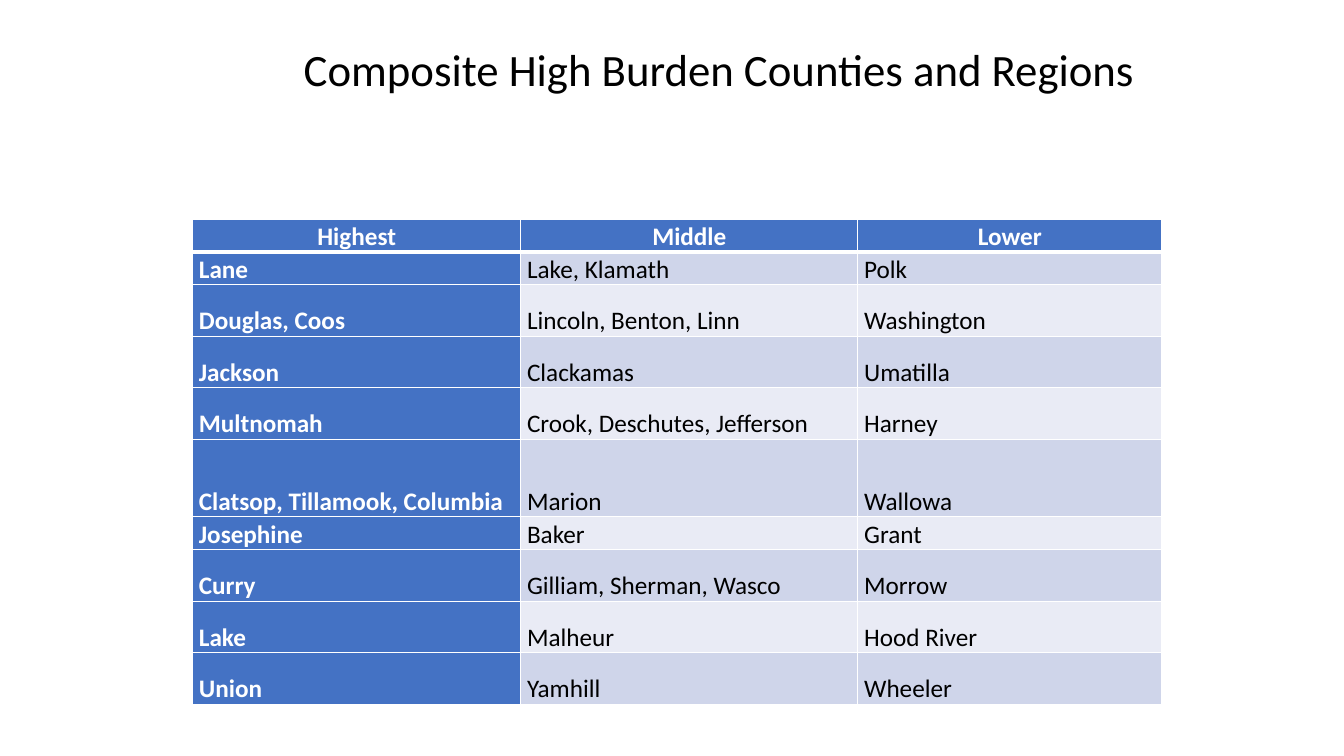
from dataclasses import dataclass

from lxml import etree
from pptx import Presentation
from pptx.dml.color import RGBColor
from pptx.enum.text import MSO_ANCHOR, MSO_AUTO_SIZE, PP_ALIGN
from pptx.oxml.ns import qn
from pptx.util import Pt

LEFT, CENTER = PP_ALIGN.LEFT, PP_ALIGN.CENTER
TOP, MIDDLE, BOTTOM = MSO_ANCHOR.TOP, MSO_ANCHOR.MIDDLE, MSO_ANCHOR.BOTTOM
NO_AUTOFIT = MSO_AUTO_SIZE.NONE
TITLE_ONLY = 5


@dataclass(frozen=True)
class Theme:
    font: str = "Calibri"
    title_size: int = 32
    table_size: int = 18
    dark: str = "000000"
    light: str = "FFFFFF"
    accent: str = "4472C4"
    bands: tuple = ("CFD5EA", "E9EBF5")
    thin: int = 1
    thick: int = 3


THEME = Theme()
TITLE = "Composite High Burden Counties and Regions"
COLUMN_WIDTHS = (234.4, 240.8, 217)
SHORT, MEDIUM, TALL = 18, 36.8, 55.4
COUNTIES = (
    (SHORT, "Highest", "Middle", "Lower"),
    (SHORT, "Lane", "Lake, Klamath", "Polk"),
    (MEDIUM, "Douglas, Coos", "Lincoln, Benton, Linn", "Washington"),
    (MEDIUM, "Jackson", "Clackamas", "Umatilla"),
    (MEDIUM, "Multnomah", "Crook, Deschutes, Jefferson", "Harney"),
    (TALL, "Clatsop, Tillamook, Columbia", "Marion", "Wallowa"),
    (SHORT, "Josephine", "Baker", "Grant"),
    (MEDIUM, "Curry", "Gilliam, Sherman, Wasco", "Morrow"),
    (MEDIUM, "Lake", "Malheur", "Hood River"),
    (MEDIUM, "Union", "Yamhill", "Wheeler"),
)


def write_text(tf, text, size, color, bold=False, align=LEFT, spacing=1.0):
    p = tf.paragraphs[0]
    p.alignment = align
    p.line_spacing = spacing
    r = p.add_run()
    r.text = text
    r.font.name = THEME.font
    r.font.size = Pt(size)
    r.font.bold = bold
    r.font.color.rgb = RGBColor.from_string(color)


def add_title(slide):
    sp = slide.shapes.title
    sp.left, sp.top, sp.width, sp.height = Pt(160.6), Pt(25.9), Pt(713.5), Pt(46)
    tf = sp.text_frame
    tf.auto_size = NO_AUTOFIT
    tf.word_wrap = True
    tf.vertical_anchor = TOP
    tf.margin_left, tf.margin_right = Pt(7.2), Pt(14.4)
    tf.margin_top = tf.margin_bottom = Pt(3.6)
    write_text(tf, TITLE, THEME.title_size, THEME.dark, align=CENTER)


def set_borders(cell, **widths):
    tc_pr = cell._tc.get_or_add_tcPr()
    for side in "LRTB":
        width = Pt(widths.get(side, THEME.thin))
        ln = etree.SubElement(tc_pr, qn(f"a:ln{side}"), w=str(width))
        fill = etree.SubElement(ln, qn("a:solidFill"))
        etree.SubElement(fill, qn("a:srgbClr"), val=THEME.light)


def format_cell(cell, text, row, col):
    header = row == 0
    strong = header or col == 0
    cell.margin_left = cell.margin_right = Pt(4.5)
    cell.margin_top = cell.margin_bottom = Pt(0)
    cell.vertical_anchor = MIDDLE if header else BOTTOM
    set_borders(
        cell,
        T=THEME.thick if row == 1 else THEME.thin,
        B=THEME.thick if header else THEME.thin,
    )
    cell.fill.solid()
    fill = THEME.accent if strong else THEME.bands[(row - 1) % 2]
    cell.fill.fore_color.rgb = RGBColor.from_string(fill)
    write_text(
        cell.text_frame,
        text,
        THEME.table_size,
        THEME.light if strong else THEME.dark,
        bold=strong,
        align=CENTER if header else LEFT,
        spacing=1.07,
    )


def add_county_table(slide):
    height = sum(row[0] for row in COUNTIES)
    frame = slide.shapes.add_table(
        len(COUNTIES), len(COLUMN_WIDTHS),
        Pt(137.6), Pt(156.4), Pt(sum(COLUMN_WIDTHS)), Pt(height),
    )
    table = frame.table
    table.first_col = True
    for column, width in zip(table.columns, COLUMN_WIDTHS):
        column.width = Pt(width)
    for row, (row_height, *names) in enumerate(COUNTIES):
        table.rows[row].height = Pt(row_height)
        for col, name in enumerate(names):
            format_cell(table.cell(row, col), name, row, col)


def main():
    prs = Presentation()
    prs.slide_width, prs.slide_height = Pt(960), Pt(540)
    slide = prs.slides.add_slide(prs.slide_layouts[TITLE_ONLY])
    add_title(slide)
    add_county_table(slide)
    prs.save("out.pptx")


if __name__ == "__main__":
    main()
